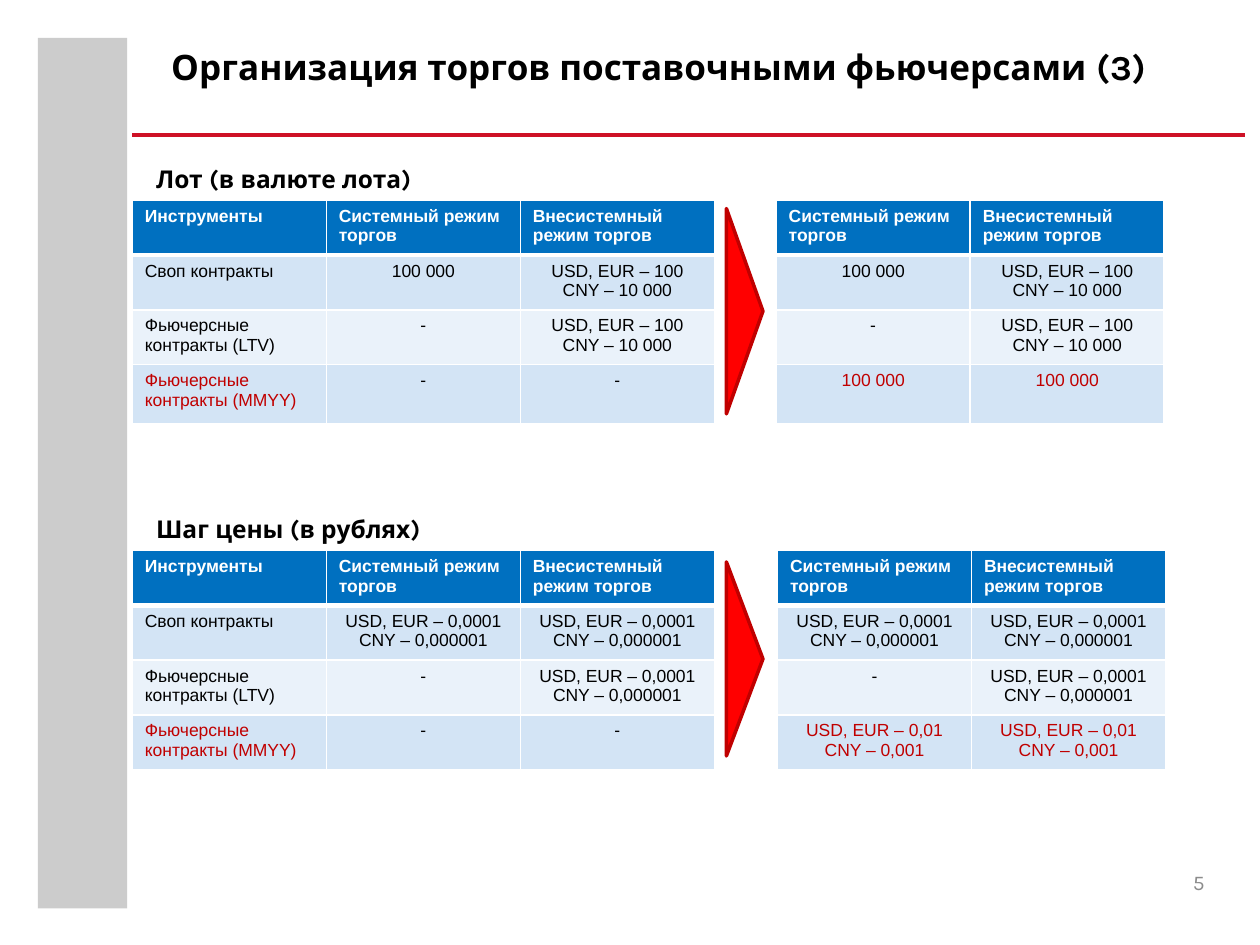
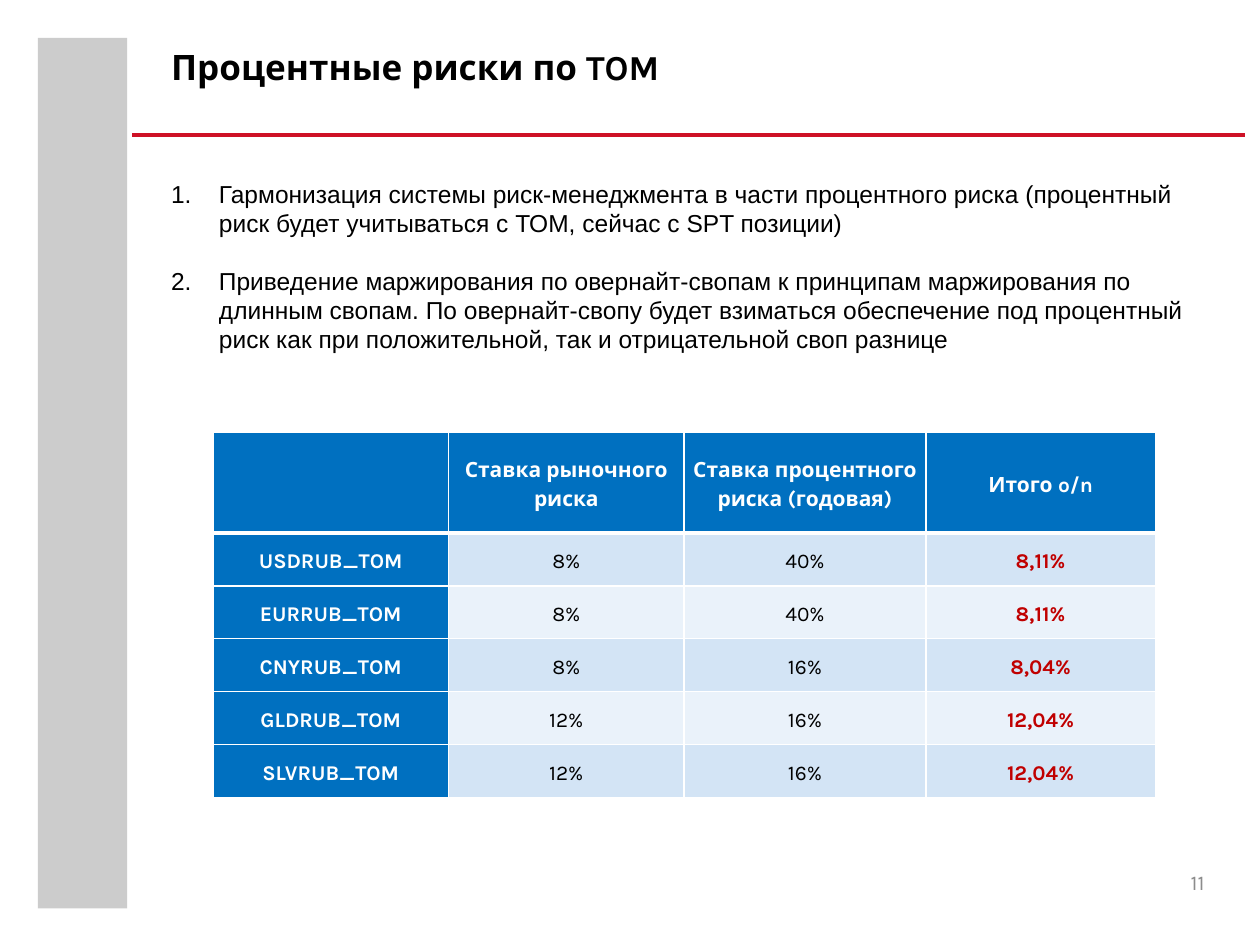
"""Builds two slides on futures trading rules and interest rate risk."""
from lxml.etree import SubElement
from pptx import Presentation
from pptx.dml.color import RGBColor
from pptx.enum.shapes import MSO_CONNECTOR, MSO_SHAPE
from pptx.enum.text import MSO_ANCHOR, PP_ALIGN
from pptx.oxml.ns import qn
from pptx.util import Inches, Pt

COLORS = {
    "band": "CCCCCC", "rule": "CE1126", "page": "8C8C8C", "black": "000000",
    "white": "FFFFFF", "head": "0070C0", "odd": "D3E4F5", "even": "EAF2FA",
    "arrow": "FF0000", "mark": "C00000",
}
SANS, BRAND = "Arial", "Karla"
LEFT, CENTER, RIGHT = PP_ALIGN.LEFT, PP_ALIGN.CENTER, PP_ALIGN.RIGHT

NAMES = ["Своп контракты", "Фьючерсные контракты (LTV)", "Фьючерсные контракты (MMYY)"]
MODES = ["Системный режим торгов", "Внесистемный режим торгов"]
LOT = "USD, EUR – 100\nCNY – 10 000"
STEP = "USD, EUR – 0,0001\nCNY – 0,000001"
WIDE = "USD, EUR – 0,01\nCNY – 0,001"

PARTS = [
    {
        "name": "Лот (в валюте лота)", "top": 1.25, "next": 6.16,
        "now": [["100 000", LOT], ["-", LOT], ["-", "-"]],
        "new": [["100 000", LOT], ["-", LOT], ["100 000", "100 000"]],
        "rows": [0.41, 0.41, 0.42, 0.47], "arrow": (2.47, 1.63),
    },
    {
        "name": "Шаг цены (в рублях)", "top": 4.03, "next": 6.17,
        "now": [[STEP, STEP], ["-", STEP], ["-", "-"]],
        "new": [[STEP, STEP], ["-", STEP], [WIDE, WIDE]],
        "rows": [0.43] * 4, "arrow": (5.23, 1.54),
    },
]

POINTS = [
    "Гармонизация системы риск-менеджмента в части процентного риска "
    "(процентный риск будет учитываться с ТОМ, сейчас с SPT позиции)",
    "Приведение маржирования по овернайт-свопам к принципам маржирования по "
    "длинным свопам. По овернайт-свопу будет взиматься обеспечение под процентный "
    "риск как при положительной, так и отрицательной своп разнице",
]
RATES = [
    ["", "Ставка рыночного риска", "Ставка процентного риска (годовая)", "Итого o/n"],
    ["USDRUB_TOM", "8%", "40%", "8,11%"],
    ["EURRUB_TOM", "8%", "40%", "8,11%"],
    ["CNYRUB_TOM", "8%", "16%", "8,04%"],
    ["GLDRUB_TOM", "12%", "16%", "12,04%"],
    ["SLVRUB_TOM", "12%", "16%", "12,04%"],
]


def rgb(name):
    return RGBColor.from_string(COLORS[name])


def write(para, text, size, face, color="black", bold=False, align=LEFT):
    para.alignment = align
    run = para.add_run()
    run.text = text
    font = run.font
    font.size, font.name, font.bold = Pt(size), face, bold
    font.color.rgb = rgb(color)


def add_box(slide, *spot):
    frame = slide.shapes.add_textbox(*map(Inches, spot)).text_frame
    frame.word_wrap = True
    return frame


def add_form(slide, kind, spot, fill, line=None):
    form = slide.shapes.add_shape(kind, *map(Inches, spot))
    form.shadow.inherit = False
    form.fill.solid()
    form.fill.fore_color.rgb = rgb(fill)
    if line:
        form.line.color.rgb = rgb(line)
        form.line.width = Pt(2)
    else:
        form.line.fill.background()
    return form


def add_edges(cell, first, second):
    props = cell._tc.get_or_add_tcPr()
    for side in "LRTB":
        thick = first and side == "B" or second and side == "T"
        line = SubElement(props, qn("a:ln" + side), w=str(Pt(3 if thick else 1)))
        fill = SubElement(line, qn("a:solidFill"))
        SubElement(fill, qn("a:srgbClr"), val=COLORS["white"])


def add_grid(slide, data, left, top, cols, rows, style):
    size = (left, top, sum(cols), sum(rows))
    grid = slide.shapes.add_table(len(rows), len(cols), *map(Inches, size)).table
    for col, width in zip(grid.columns, cols):
        col.width = Inches(width)
    for i, (row, height) in enumerate(zip(data, rows)):
        grid.rows[i].height = Inches(height)
        for j, text in enumerate(row):
            cell = grid.cell(i, j)
            add_edges(cell, i == 0, i == 1)
            fill, look, pad, lead = style(i, j)
            cell.fill.solid()
            cell.fill.fore_color.rgb = rgb(fill)
            if pad:
                cell.vertical_anchor = MSO_ANCHOR.MIDDLE
                cell.margin_left = cell.margin_right = Inches(pad)
                cell.margin_top = cell.margin_bottom = Inches(pad)
            for k, part in enumerate(text.split("\n") if text else []):
                frame = cell.text_frame
                para = frame.add_paragraph() if k else frame.paragraphs[0]
                if lead:
                    para.line_spacing = Pt(lead)
                write(para, part, **look)


def mode_style(named):
    def style(i, j):
        look = {"size": 10, "face": SANS}
        if i == 0:
            return "head", look | {"color": "white", "bold": True}, None, None
        label = named and j == 0
        red = i == 3 and (label or not named)
        look |= {"color": "mark" if red else "black", "align": LEFT if label else CENTER}
        return "odd" if i % 2 else "even", look, None, None
    return style


def rate_style(i, j):
    head = i == 0 or j == 0
    color = "white" if head else "mark" if j == 3 else "black"
    look = {"size": 12, "face": BRAND, "color": color,
            "bold": color != "black", "align": CENTER}
    fill = "head" if head else "odd" if i % 2 else "even"
    return fill, look, 0.02 if i else 0.03, 16.8


def add_page(deck, title, page):
    slide = deck.slides.add_slide(deck.slide_layouts[6])
    add_form(slide, MSO_SHAPE.RECTANGLE, (0.3, 0.3, 0.71, 6.91), "band")
    ends = map(Inches, (1.05, 1.07, 9.88, 1.07))
    rule = slide.shapes.add_connector(MSO_CONNECTOR.STRAIGHT, *ends)
    rule.line.color.rgb = rgb("rule")
    rule.line.width = Pt(2)
    SubElement(rule._element.spPr, qn("a:effectLst"))
    frame = add_box(slide, 1.26, 0.31, 8.58, 0.83)
    write(frame.paragraphs[0], title, 20, BRAND, bold=True)
    foot = add_box(slide, 9.17, 6.78, 0.39, 0.39)
    foot.margin_right = foot.margin_bottom = 0
    foot.vertical_anchor = MSO_ANCHOR.MIDDLE
    write(foot.paragraphs[0], str(page), 12, BRAND, "page", align=RIGHT)
    return slide


def add_part(slide, part):
    top, rows = part["top"], part["rows"]
    frame = add_box(slide, 1.14, top, 8.53, 0.34)
    write(frame.paragraphs[0], part["name"], 14, BRAND, bold=True)
    now = [["Инструменты"] + MODES]
    now += [[name] + row for name, row in zip(NAMES, part["now"])]
    new = [MODES] + part["new"]
    for data, left, named in ((now, 1.05, True), (new, part["next"], False)):
        cols = [1.54] * len(data[0])
        add_grid(slide, data, left, top + 0.34, cols, rows, mode_style(named))
    mid, span = part["arrow"]
    spot = (5.91 - span / 2, mid - 0.145, span, 0.29)
    arrow = add_form(slide, MSO_SHAPE.ISOSCELES_TRIANGLE, spot, "arrow", "mark")
    arrow.rotation = 90


def add_points(slide):
    frame = add_box(slide, 1.26, 1.37, 8.33, 1.51)
    for i, text in enumerate(POINTS):
        para = frame.add_paragraph() if i else frame.paragraphs[0]
        if i:
            para.space_before = Pt(16)
        props = para._p.get_or_add_pPr()
        props.set("marL", str(Inches(0.38)))
        props.set("indent", str(-Inches(0.38)))
        SubElement(props, qn("a:buFont"), typeface=SANS)
        SubElement(props, qn("a:buAutoNum"), type="arabicPeriod")
        write(para, text, 14, SANS)


def main():
    deck = Presentation()
    deck.slide_width, deck.slide_height = Inches(10), Inches(7.5)
    slide = add_page(deck, "Организация торгов поставочными фьючерсами (3)", 5)
    for part in PARTS:
        add_part(slide, part)
    slide = add_page(deck, "Процентные риски по TOM", 11)
    add_points(slide)
    cols, rows = [1.87, 1.87, 1.92, 1.82], [0.8] + [0.42] * 5
    add_grid(slide, RATES, 1.69, 3.43, cols, rows, rate_style)
    deck.save("out.pptx")


if __name__ == "__main__":
    main()
